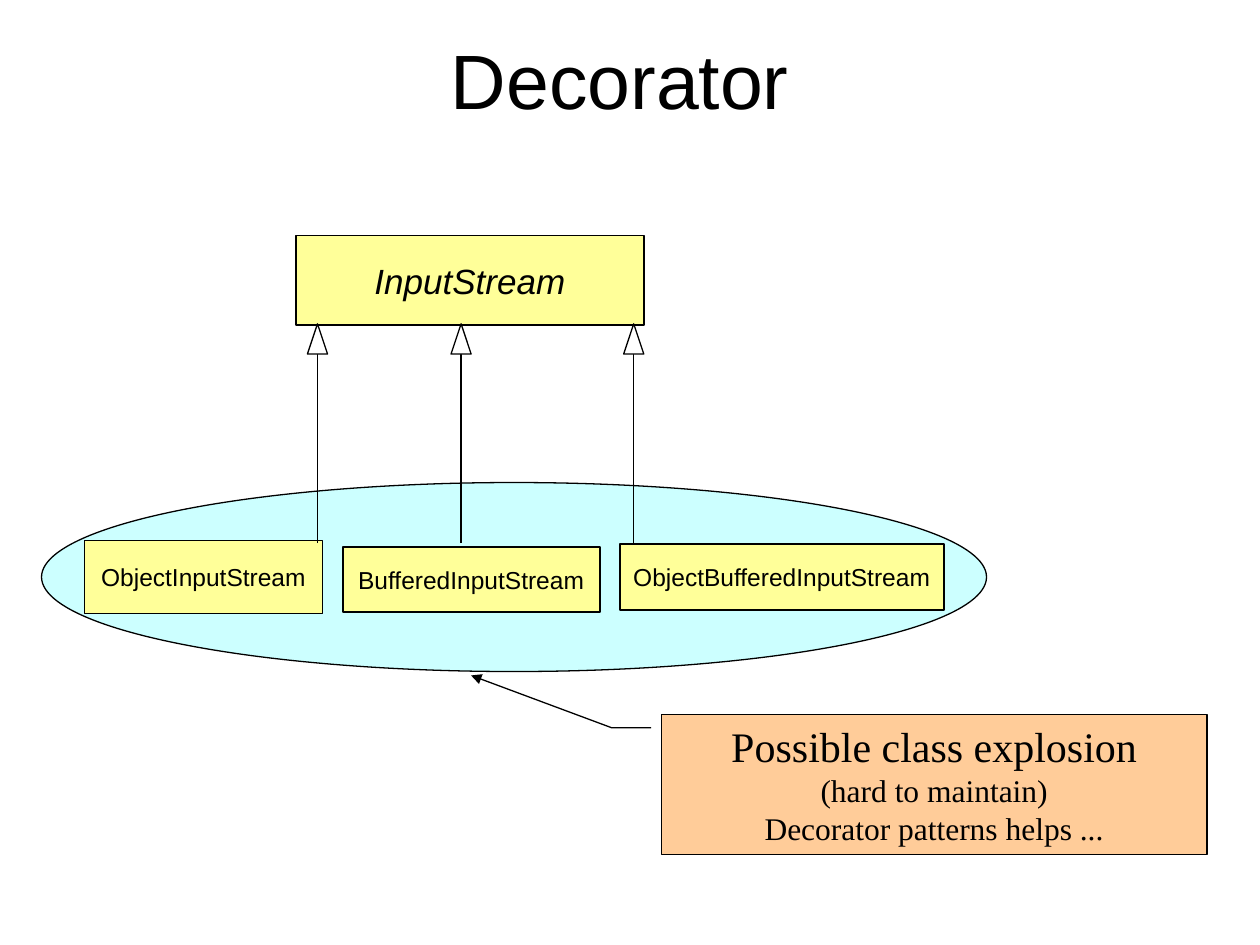
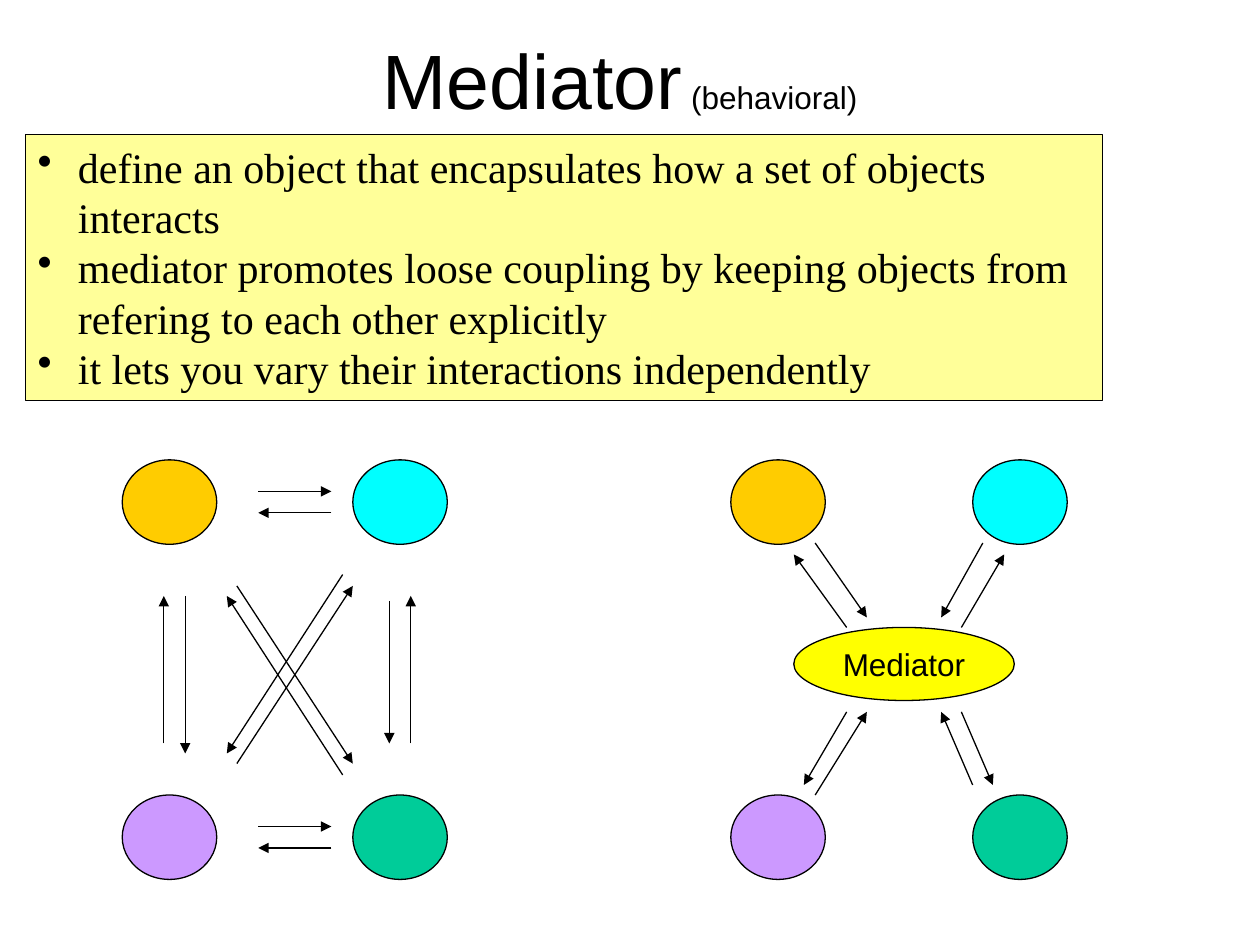
"""Builds two slides on the Decorator and Mediator design patterns."""
from dataclasses import dataclass

from lxml import etree
from pptx import Presentation
from pptx.dml.color import RGBColor
from pptx.enum.shapes import MSO_CONNECTOR, MSO_SHAPE
from pptx.enum.text import MSO_ANCHOR, PP_ALIGN
from pptx.oxml.ns import qn
from pptx.util import Inches, Pt

RECTANGLE, OVAL = MSO_SHAPE.RECTANGLE, MSO_SHAPE.OVAL
TRIANGLE, CALLOUT = MSO_SHAPE.ISOSCELES_TRIANGLE, MSO_SHAPE.LINE_CALLOUT_2
STRAIGHT = MSO_CONNECTOR.STRAIGHT
TOP, MIDDLE = MSO_ANCHOR.TOP, MSO_ANCHOR.MIDDLE
LEFT, CENTER = PP_ALIGN.LEFT, PP_ALIGN.CENTER


@dataclass(frozen=True)
class Theme:
    """Colours, fonts and type sizes shared by the slides."""
    ink: str = "000000"
    paper: str = "FFFFFF"
    pale_yellow: str = "FFFF99"
    pale_cyan: str = "CCFFFF"
    peach: str = "FFCC99"
    yellow: str = "FFFF00"
    colleagues: tuple = ("FFCC00", "00FFFF", "CC99FF", "00CC99")
    sans: str = "Arial"
    serif: str = "Times New Roman"
    title: int = 44
    body: int = 24
    parent: int = 20
    small: int = 18
    subclass: int = 14
    thin: float = 0.75
    outline: float = 1


THEME = Theme()
TITLE_AREA = (0.67, 0, 8.5, 1.25)

PARENT = ("InputStream", (2.35, 1.87, 2.76, 0.71))
SUBCLASSES = [
    ("ObjectInputStream", (0.67, 4.29, 1.89, 0.58)),
    ("ObjectBufferedInputStream", (4.92, 4.32, 2.57, 0.52)),
    ("BufferedInputStream", (2.72, 4.34, 2.04, 0.52)),
]
SUBCLASS_AREA = (0.33, 3.83, 7.5, 1.5)
INHERITANCE_X = [2.52, 3.66, 5.03]
INHERITANCE_TOP, INHERITANCE_BOTTOM = 2.57, 4.31
HEAD_WIDTH, HEAD_HEIGHT = 0.16, 0.24
WARNING = ["Possible class explosion", "(hard to maintain)", "Decorator patterns helps ..."]
WARNING_AREA = (5.25, 5.67, 4.33, 1.11)
WARNING_LEADER = (0.096, -0.019, 0.096, -0.091, -0.279, -0.349)

INTENT = [
    "define an object that encapsulates how a set of objects\vinteracts",
    "mediator promotes loose coupling by keeping objects from\vrefering to each other explicitly",
    "it lets you vary their interactions independently",
]
INTENT_AREA = (0.2, 1.07, 8.55, 2.11)
BULLET_INDENT = 0.32
MEDIATOR_AREA = (6.3, 4.98, 1.75, 0.58)
COLLEAGUE_COLUMNS = [(0.97, 2.8), (5.8, 7.72)]
COLLEAGUE_ROWS = (3.65, 6.31)
COLLEAGUE_SIZE = (0.75, 0.67)
DIRECT_ARROWS = [
    (1.47, 4.73, 1.47, 5.98), (1.3, 5.9, 1.3, 4.73),
    (3.09, 4.77, 3.09, 5.9), (3.26, 5.9, 3.26, 4.73),
    (1.88, 6.06, 2.8, 4.65), (2.72, 4.56, 1.8, 5.98),
    (1.88, 4.65, 2.8, 6.06), (2.72, 6.15, 1.8, 4.73),
]
MEDIATED_ARROWS = [
    (6.47, 4.31, 6.88, 4.9), (6.72, 4.98, 6.3, 4.4),
    (7.63, 4.98, 7.97, 4.4), (7.8, 4.31, 7.47, 4.9),
    (6.47, 6.31, 6.88, 5.65), (6.72, 5.65, 6.38, 6.23),
    (7.63, 5.65, 7.88, 6.23), (7.72, 6.23, 7.47, 5.65),
]


def color(code):
    """Turn a hex code into a colour."""
    return RGBColor.from_string(code)


def style_span(span, size, font, italic=False):
    """Format one run of text."""
    span.font.size = Pt(size)
    span.font.name = font
    span.font.italic = italic
    span.font.color.rgb = color(THEME.ink)


def add_title(deck, text, suffix=""):
    """Add a title-only slide with an optional small suffix in its title."""
    page = deck.slides.add_slide(deck.slide_layouts[5])
    title = page.shapes.title
    title.left, title.top, title.width, title.height = map(Inches, TITLE_AREA)
    title.text_frame.vertical_anchor = MIDDLE
    para = title.text_frame.paragraphs[0]
    para.alignment = CENTER
    for words, size in ((text, THEME.title), (suffix, THEME.small)):
        if words:
            span = para.add_run()
            span.text = words
            style_span(span, size, THEME.sans)
    return page


def add_box(page, kind, area, fill, width=THEME.thin):
    """Add a filled, outlined shape."""
    box = page.shapes.add_shape(kind, *map(Inches, area))
    box.shadow.inherit = False
    box.fill.solid()
    box.fill.fore_color.rgb = color(fill)
    box.line.color.rgb = color(THEME.ink)
    box.line.width = Pt(width)
    return box


def write(box, lines, sizes, font, align=CENTER, anchor=MIDDLE, wrap=False, italic=False):
    """Fill a shape with one paragraph for each line."""
    frame = box.text_frame
    frame.text = "\n".join(lines)
    frame.word_wrap = wrap
    frame.vertical_anchor = anchor
    for para, size in zip(frame.paragraphs, sizes):
        para.alignment = align
        for span in para.runs:
            style_span(span, size, font, italic)


def add_bullets(box):
    """Give each paragraph a hanging bullet."""
    indent = Inches(BULLET_INDENT)
    for para in box.text_frame.paragraphs:
        properties = para._p.get_or_add_pPr()
        properties.set("marL", str(indent))
        properties.set("indent", str(-indent))
        etree.SubElement(properties, qn("a:buChar"), char="•")


def add_arrowhead(shape):
    """Put a triangle at the end of a line."""
    outline = shape.element.spPr.find(qn("a:ln"))
    etree.SubElement(outline, qn("a:tailEnd"), type="triangle")


def add_line(page, ends, arrow=False):
    """Draw a straight line, with an arrowhead if asked."""
    line = page.shapes.add_connector(STRAIGHT, *map(Inches, ends))
    line.line.color.rgb = color(THEME.ink)
    line.line.width = Pt(THEME.thin)
    etree.SubElement(line.element.spPr, qn("a:effectLst"))
    if arrow:
        add_arrowhead(line)


def build_decorator(deck):
    """Build the class hierarchy slide."""
    page = add_title(deck, "Decorator")
    add_box(page, OVAL, SUBCLASS_AREA, THEME.pale_cyan)
    warning = add_box(page, CALLOUT, WARNING_AREA, THEME.peach)
    for index, value in enumerate(WARNING_LEADER):
        warning.adjustments[index] = value
    add_arrowhead(warning)
    sizes = (THEME.body, THEME.small, THEME.small)
    write(warning, WARNING, sizes, THEME.serif, anchor=TOP, wrap=True)

    for name, area in [PARENT, *SUBCLASSES]:
        is_parent = name == PARENT[0]
        box = add_box(page, RECTANGLE, area, THEME.pale_yellow, THEME.outline)
        size = THEME.parent if is_parent else THEME.subclass
        write(box, [name], [size], THEME.sans, italic=is_parent)

    for x in INHERITANCE_X:
        add_line(page, (x, INHERITANCE_BOTTOM, x, INHERITANCE_TOP))
        head = (x - HEAD_WIDTH / 2, INHERITANCE_TOP, HEAD_WIDTH, HEAD_HEIGHT)
        add_box(page, TRIANGLE, head, THEME.paper)


def build_mediator(deck):
    """Build the slide comparing direct and mediated links."""
    page = add_title(deck, "Mediator", " (behavioral)")
    intent = add_box(page, RECTANGLE, INTENT_AREA, THEME.pale_yellow)
    write(intent, INTENT, [THEME.body] * len(INTENT), THEME.serif, LEFT, TOP, True)
    add_bullets(intent)

    for columns in COLLEAGUE_COLUMNS:
        places = [(x, y) for y in COLLEAGUE_ROWS for x in columns]
        for place, fill in zip(places, THEME.colleagues):
            add_box(page, OVAL, place + COLLEAGUE_SIZE, fill)
    mediator = add_box(page, OVAL, MEDIATOR_AREA, THEME.yellow)
    write(mediator, ["Mediator"], [THEME.small], THEME.sans)

    for y in COLLEAGUE_ROWS:
        add_line(page, (2.05, y + 0.25, 2.63, y + 0.25), arrow=True)
        add_line(page, (2.63, y + 0.42, 2.05, y + 0.42), arrow=True)
    for ends in DIRECT_ARROWS + MEDIATED_ARROWS:
        add_line(page, ends, arrow=True)


def main():
    """Build and save the deck."""
    deck = Presentation()
    deck.slide_width, deck.slide_height = Inches(10), Inches(7.5)
    build_decorator(deck)
    build_mediator(deck)
    deck.save("out.pptx")


if __name__ == "__main__":
    main()
